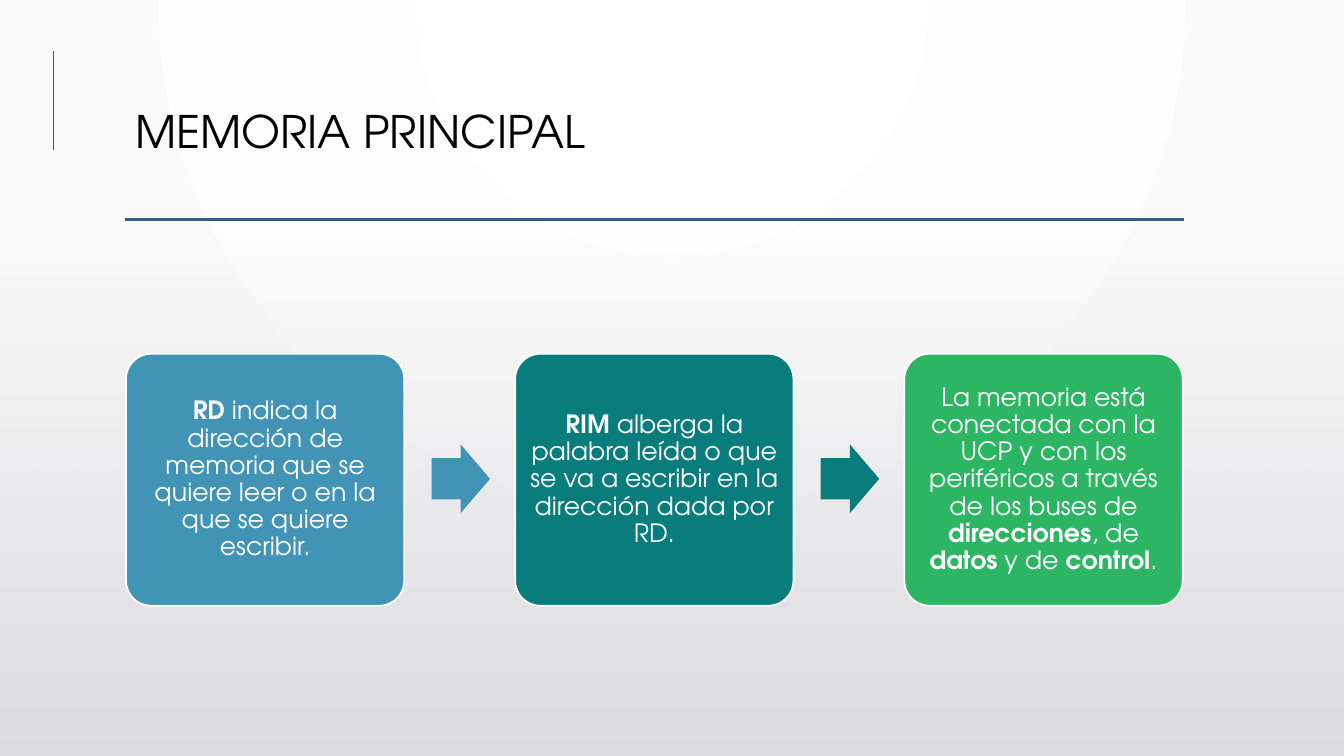
import pptx
import pptx.dml.color
import pptx.enum.shapes
import pptx.enum.text
import pptx.oxml
import pptx.oxml.ns
import pptx.util
from pptx.util import Inches

FONT = "TeX Gyre Adventor"
SHAPES = pptx.enum.shapes.MSO_SHAPE
ANCHOR = pptx.enum.text.MSO_ANCHOR
ALIGN = pptx.enum.text.PP_ALIGN
CIRCLE = ('<a:path path="circle"><a:fillToRect l="43000" t="0" r="43000" b="100000"/></a:path>')
DOWNWARD = '<a:lin ang="5400000" scaled="0"/>'

STEPS = [
    ("4294B6", [("RD", True),
                (" indica la dirección de memoria que se quiere leer o en la que se quiere escribir.", False)]),
    ("087D7C", [("RIM", True),
                (" alberga la palabra leída o que se va a escribir en la dirección dada por RD.", False)]),
    ("2CB663", [("La memoria está conectada con la UCP y con los periféricos a través de los buses de ", False),
                ("direcciones", True), (", de ", False), ("datos", True),
                (" y de ", False), ("control", True), (".", False)]),
]


def color(hex_string):
    return pptx.dml.color.RGBColor.from_string(hex_string)


def format_paragraph(paragraph, size, hex_string, alignment):
    paragraph.alignment = alignment
    paragraph.line_spacing = 0.9
    paragraph.font.name = FONT
    paragraph.font.size = pptx.util.Pt(size)
    paragraph.font.color.rgb = color(hex_string)


def add_shape(slide, kind, left, top, width, height, fill=None):
    shape = slide.shapes.add_shape(kind, Inches(left), Inches(top), Inches(width), Inches(height))
    shape.shadow.inherit = False
    shape.line.fill.background()
    if fill:
        shape.fill.solid()
        shape.fill.fore_color.rgb = color(fill)
    return shape


def add_gradient_panel(slide, top, height, start, end, start_alpha, direction):
    panel = add_shape(slide, SHAPES.RECTANGLE, 0, top, 13.33, height)
    gradient = pptx.oxml.parse_xml(
        f'<a:gradFill {pptx.oxml.ns.nsdecls("a")} rotWithShape="1"><a:gsLst>'
        f'<a:gs pos="0"><a:srgbClr val="{start}"><a:alpha val="{start_alpha * 1000}"/></a:srgbClr></a:gs>'
        f'<a:gs pos="100000"><a:srgbClr val="{end}"/></a:gs>'
        f'</a:gsLst>{direction}</a:gradFill>')
    panel.element.spPr.find(pptx.oxml.ns.qn("a:prstGeom")).addnext(gradient)


def add_line(slide, x1, y1, x2, y2, width):
    line = slide.shapes.add_connector(
        pptx.enum.shapes.MSO_CONNECTOR.STRAIGHT, Inches(x1), Inches(y1), Inches(x2), Inches(y2))
    line.line.color.rgb = color("415588")
    line.line.width = pptx.util.Pt(width)
    line.element.spPr.append(pptx.oxml.parse_xml(f'<a:effectLst {pptx.oxml.ns.nsdecls("a")}/>'))


def set_title(slide, text):
    title = slide.shapes.title
    title.left, title.top, title.width, title.height = Inches(1.24), Inches(1.04), Inches(10.5), Inches(1.15)
    title.text_frame.text = text
    title.text_frame.vertical_anchor = ANCHOR.TOP
    format_paragraph(title.text_frame.paragraphs[0], 32, "000000", ALIGN.LEFT)


def add_step(slide, left, fill, runs):
    box = add_shape(slide, SHAPES.ROUNDED_RECTANGLE, left, 3.51, 2.76, 2.5, fill)
    box.adjustments[0] = 0.1
    box.line.color.rgb = color("FFFFFF")
    box.line.width = pptx.util.Pt(1.25)
    frame = box.text_frame
    frame.word_wrap = True
    frame.vertical_anchor = ANCHOR.MIDDLE
    frame.margin_left = frame.margin_right = frame.margin_top = frame.margin_bottom = Inches(0.07)
    paragraph = frame.paragraphs[0]
    format_paragraph(paragraph, 18, "FFFFFF", ALIGN.CENTER)
    for text, bold in runs:
        run = paragraph.add_run()
        run.text = text
        run.font.bold = bold


def add_arrow(slide, left, fill):
    arrow = add_shape(slide, SHAPES.RIGHT_ARROW, left, 4.41, 0.58, 0.68, fill)
    arrow.adjustments[0] = 0.6
    arrow.adjustments[1] = 0.5


def main():
    presentation = pptx.Presentation()
    presentation.slide_width = Inches(13.33)
    presentation.slide_height = Inches(7.5)
    slide = presentation.slides.add_slide(presentation.slide_layouts[5])

    add_gradient_panel(slide, 0, 7.5, "FFFFFF", "FAFAFA", 100, CIRCLE)
    add_gradient_panel(slide, 2.21, 5.29, "DCDCE0", "DCDCE0", 0, DOWNWARD)
    title = slide.shapes.title
    slide.shapes.element.append(title.element)
    set_title(slide, "MEMORIA PRINCIPAL")
    add_line(slide, 1.24, 2.18, 11.74, 2.18, 2.5)
    add_line(slide, 0.53, 0.51, 0.53, 1.49, 0.75)

    for index, (fill, runs) in enumerate(STEPS):
        left = 1.25 + 3.86 * index
        add_step(slide, left, fill, runs)
        if index < len(STEPS) - 1:
            add_arrow(slide, left + 3.03, fill)

    presentation.save("out.pptx")


if __name__ == "__main__":
    main()
